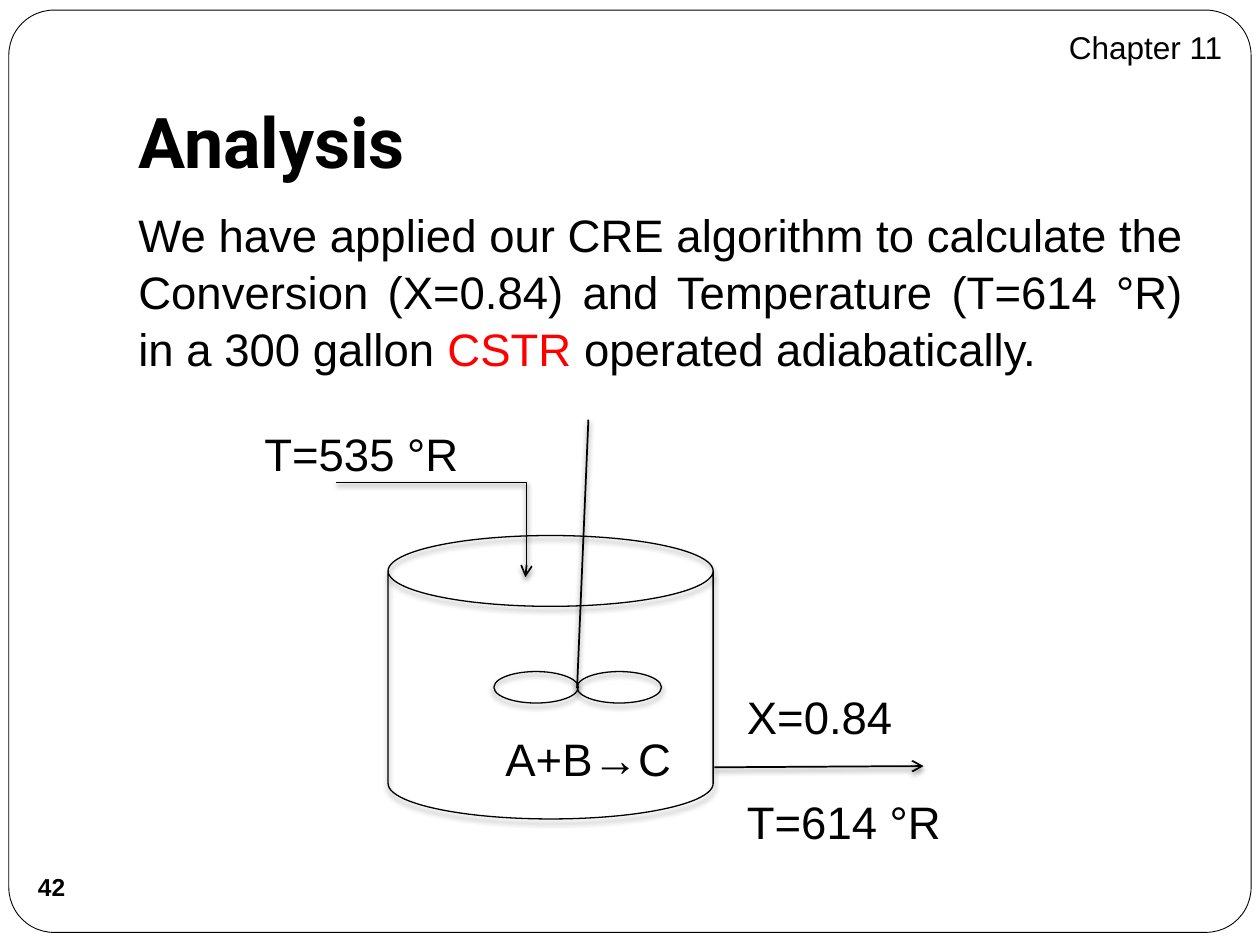
from lxml import etree
from pptx import Presentation
from pptx.dml.color import RGBColor
from pptx.enum.shapes import MSO_CONNECTOR, MSO_SHAPE
from pptx.enum.text import MSO_ANCHOR, MSO_AUTO_SIZE, PP_ALIGN
from pptx.oxml import parse_xml
from pptx.oxml.ns import qn
from pptx.util import Inches, Pt

STRAIGHT, ELBOW = MSO_CONNECTOR.STRAIGHT, MSO_CONNECTOR.ELBOW
CAN, OVAL, ROUNDED = MSO_SHAPE.CAN, MSO_SHAPE.OVAL, MSO_SHAPE.ROUNDED_RECTANGLE
LEFT, CENTER, RIGHT, JUSTIFY = (PP_ALIGN.LEFT, PP_ALIGN.CENTER,
                                PP_ALIGN.RIGHT, PP_ALIGN.JUSTIFY)
BLACK, WHITE, RED = "000000", "FFFFFF", "FF0000"
TITLE_ONLY = 5
INSETS = (0.1, 0.05, 0.1, 0.05)
SHADOW = (
    '<a:effectLst xmlns:a="http://schemas.openxmlformats.org/drawingml/2006/main">'
    '<a:outerShdw blurRad="38100" dist="25400" dir="5400000" rotWithShape="0">'
    '<a:srgbClr val="000000"><a:alpha val="50000"/></a:srgbClr>'
    '</a:outerShdw></a:effectLst>')


def color(value):
    return RGBColor.from_string(value)


def assign(target, values):
    for name, value in values.items():
        setattr(target, name, value)


def write(box, spans, size, align=LEFT, anchor=MSO_ANCHOR.TOP, insets=INSETS,
          wrap=True, spacing=None, font="Arial", bold=False):
    """Fill a box with one paragraph made of (text, colour) spans."""
    frame = box.text_frame
    left, top, right, bottom = map(Inches, insets)
    assign(frame, {"word_wrap": wrap, "auto_size": MSO_AUTO_SIZE.NONE,
                   "vertical_anchor": anchor, "margin_left": left,
                   "margin_top": top, "margin_right": right,
                   "margin_bottom": bottom})
    para = frame.paragraphs[0]
    assign(para, {"alignment": align, **(spacing or {})})
    for text, shade in spans:
        span = para.add_run()
        span.text = text
        assign(span.font, {"name": font, "size": Pt(size), "bold": bold})
        span.font.color.rgb = color(shade)


def add_text(page, place, spans, size, **options):
    box = page.shapes.add_textbox(*map(Inches, place))
    write(box, spans, size, **options)


def add_outline(page, kind, place, width=0.75, fill=None, shadow=True):
    shape = page.shapes.add_shape(kind, *map(Inches, place))
    shape.shadow.inherit = False
    if fill:
        shape.fill.solid()
        shape.fill.fore_color.rgb = color(fill)
    else:
        shape.fill.background()
    if width:
        shape.line.color.rgb = color(BLACK)
        shape.line.width = Pt(width)
    else:
        shape.line.fill.background()
    if shadow:
        cast_shadow(shape)
    return shape


def cast_shadow(shape):
    properties = shape._element.spPr
    for effects in properties.findall(qn("a:effectLst")):
        properties.remove(effects)
    properties.append(parse_xml(SHADOW))


def add_line(page, start, end, kind=STRAIGHT, arrow=False, bend=None):
    line = page.shapes.add_connector(kind, *map(Inches, start + end))
    line.line.color.rgb = color(BLACK)
    line.line.width = Pt(1)
    if arrow:
        etree.SubElement(line.line._get_or_add_ln(), qn("a:tailEnd"), type="arrow")
    if bend:
        guides = line._element.spPr.find(qn("a:prstGeom")).get_or_add_avLst()
        etree.SubElement(guides, qn("a:gd"), name="adj1", fmla=f"val {bend}")
    cast_shadow(line)


def add_frame(page):
    frame = add_outline(page, ROUNDED, (0.07, 0.08, 9.86, 7.32), 0.5, WHITE, False)
    frame.adjustments[0] = 0.049
    page.shapes._spTree.insert(2, frame._element)  # behind the title


def add_title(page, text):
    title = page.shapes.title
    assign(title, {"left": Inches(1), "top": Inches(0.3),
                   "width": Inches(8.5), "height": Inches(1.25)})
    write(title, [(text, BLACK)], 40, anchor=MSO_ANCHOR.BOTTOM,
          insets=(0.1, 0.05, 0.1, 0.1), font="Roboto", bold=True)


def add_reactor(page):
    # Vessel and feed
    add_outline(page, CAN, (3.08, 4.25, 2.58, 2.25))
    add_line(page, (2.67, 3.83), (4.17, 4.58), ELBOW, arrow=True, bend=100600)
    # Outlet
    add_line(page, (5.67, 6.09), (7.33, 6.08), arrow=True)
    # Stirrer
    for left in (3.92, 4.58):
        add_outline(page, OVAL, (left, 5.33, 0.67, 0.25))
    add_line(page, (4.67, 3.33), (4.58, 5.46))
    # Stream and reaction labels
    for text, left, top, width, align in (
            ("X=0.84", 5.83, 5.42, 2.67, LEFT),
            ("T=614 °R", 5.83, 6.25, 2.67, LEFT),
            ("T=535 °R", 2, 3.33, 2.67, LEFT),
            ("A+B→C", 3.67, 5.75, 2, CENTER)):
        add_text(page, (left, top, width, 0.54), [(text, BLACK)], 26, align=align)


def main():
    deck = Presentation()
    deck.slide_width, deck.slide_height = Inches(10), Inches(7.5)
    page = deck.slides.add_slide(deck.slide_layouts[TITLE_ONLY])

    add_frame(page)
    add_title(page, "Analysis")

    # Page number
    badge = add_outline(page, OVAL, (0.16, 6.79, 0.5, 0.5), None, shadow=False)
    write(badge, [("42", BLACK)], 14, align=CENTER, anchor=MSO_ANCHOR.MIDDLE,
          insets=(0, 0, 0, 0), wrap=False, bold=True)

    # Statement
    add_text(page, (1, 1.58, 8.5, 5), [
        ("We have applied our CRE algorithm to calculate the Conversion "
         "(X=0.84) and Temperature (T=614 °R) in a 300 gallon ", BLACK),
        ("CSTR", RED),
        (" operated adiabatically.", BLACK),
    ], 26, align=JUSTIFY, spacing={"space_before": Pt(5.8), "line_spacing": 1.04})

    add_reactor(page)
    add_text(page, (7.04, 0.17, 2.76, 0.4), [("Chapter 11", BLACK)], 18, align=RIGHT)

    deck.save("out.pptx")


if __name__ == "__main__":
    main()
